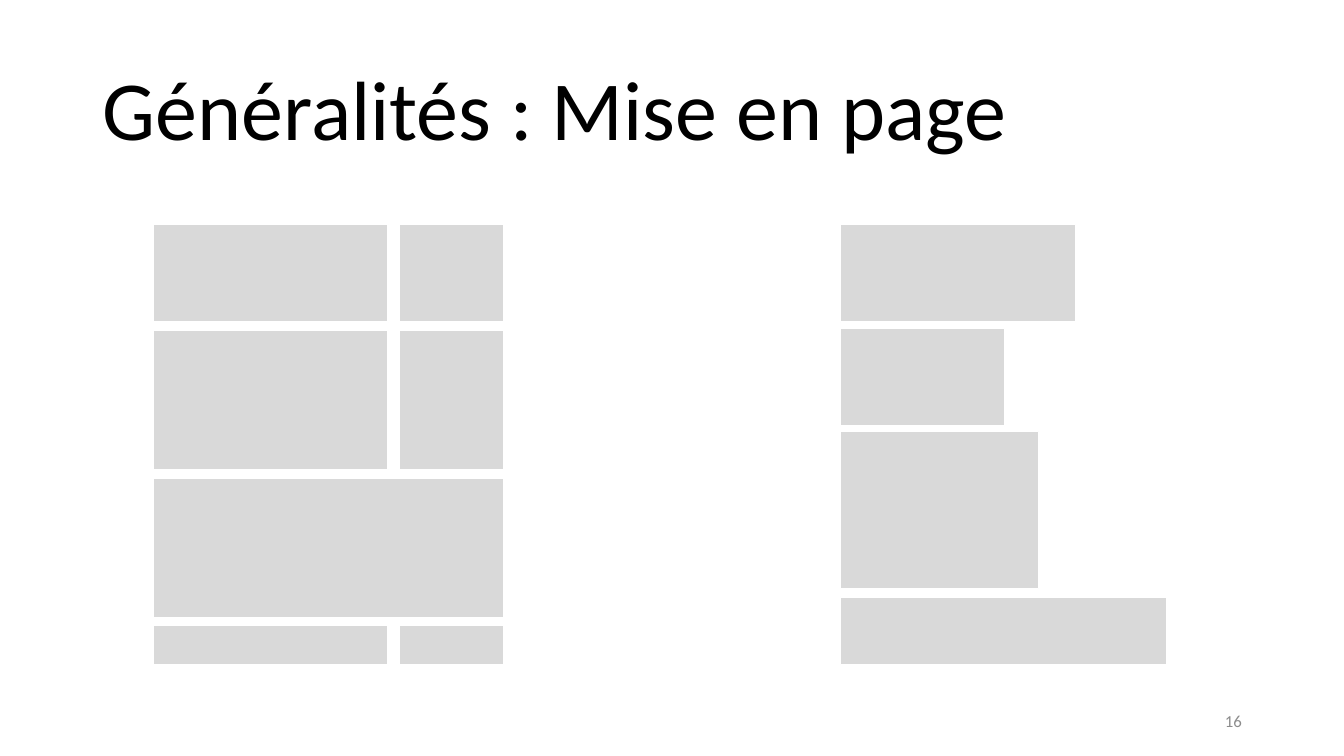
from dataclasses import dataclass

from pptx import Presentation
from pptx.dml.color import RGBColor
from pptx.enum import shapes, text
from pptx.shapes.group import GroupShape
from pptx.slide import Slide
from pptx.text.text import TextFrame
from pptx.util import Cm, Pt

BLACK = RGBColor(0x00, 0x00, 0x00)
NUMBER_GREY = RGBColor(0x8C, 0x8C, 0x8C)
BLOCK_GREY = RGBColor(0xD9, 0xD9, 0xD9)
WHITE = RGBColor(0xFF, 0xFF, 0xFF)
FONT = "Calibri"


@dataclass(frozen=True)
class Block:
    """A grey rectangle, measured in centimetres."""

    left: float
    top: float
    width: float
    height: float


@dataclass(frozen=True)
class Row:
    height: float
    split: bool


LAYOUT_TOP = 5.66
GRID_GAP = 0.21
MAIN_LEFT, MAIN_WIDTH = 3.86, 5.92
SIDE_LEFT, SIDE_WIDTH = 10.06, 2.64
ALIGNED_ROWS = [Row(2.46, True), Row(3.51, True), Row(3.51, False), Row(0.99, True)]

RAGGED_LEFT = 21.18
RAGGED_BLOCKS = [
    Block(RAGGED_LEFT, LAYOUT_TOP, 5.92, 2.46),
    Block(RAGGED_LEFT, 8.28, 4.14, 2.46),
    Block(RAGGED_LEFT, 10.87, 5, 3.96),
    Block(RAGGED_LEFT, 15.04, 8.23, 1.7),
]


def aligned_blocks() -> list[Block]:
    """Stack the rows, each with a main and a side block or one full-width block."""
    blocks: list[Block] = []
    top = LAYOUT_TOP
    for row in ALIGNED_ROWS:
        if row.split:
            blocks.append(Block(MAIN_LEFT, top, MAIN_WIDTH, row.height))
            blocks.append(Block(SIDE_LEFT, top, SIDE_WIDTH, row.height))
        else:
            full_width = SIDE_LEFT + SIDE_WIDTH - MAIN_LEFT
            blocks.append(Block(MAIN_LEFT, top, full_width, row.height))
        top += row.height + GRID_GAP
    return blocks


def draw_block(group: GroupShape, block: Block) -> None:
    shape = group.shapes.add_shape(
        shapes.MSO_SHAPE.RECTANGLE,
        Cm(block.left), Cm(block.top), Cm(block.width), Cm(block.height),
    )
    shape.shadow.inherit = False
    shape.fill.solid()
    shape.fill.fore_color.rgb = BLOCK_GREY
    shape.line.color.rgb = WHITE
    shape.line.width = Pt(1)


def draw_layout(slide: Slide, blocks: list[Block]) -> None:
    group = slide.shapes.add_group_shape()
    for block in blocks:
        draw_block(group, block)


def write_line(
    frame: TextFrame, words: str, size: float, color: RGBColor, alignment: text.PP_ALIGN
) -> None:
    frame.text = words
    frame.word_wrap = True
    frame.auto_size = text.MSO_AUTO_SIZE.NONE
    frame.vertical_anchor = text.MSO_ANCHOR.MIDDLE
    paragraph = frame.paragraphs[0]
    paragraph.alignment = alignment
    paragraph.font.name = FONT
    paragraph.font.size = Pt(size)
    paragraph.font.color.rgb = color


def add_title(slide: Slide) -> None:
    title = slide.shapes.title
    title.left, title.top = Cm(2.34), Cm(1.02)
    title.width, title.height = Cm(29.21), Cm(3.68)
    write_line(
        title.text_frame, "Généralités : Mise en page", 60, BLACK, text.PP_ALIGN.LEFT
    )
    title.text_frame.paragraphs[0].line_spacing = 0.9


def add_page_number(slide: Slide) -> None:
    box = slide.shapes.add_textbox(Cm(23.93), Cm(17.65), Cm(7.62), Cm(1.02))
    write_line(box.text_frame, "16", 12, NUMBER_GREY, text.PP_ALIGN.RIGHT)


def main() -> None:
    presentation = Presentation()
    presentation.slide_width = Cm(33.87)
    presentation.slide_height = Cm(19.05)
    title_only = presentation.slide_layouts.get_by_name("Title Only")
    slide = presentation.slides.add_slide(title_only)
    add_title(slide)
    add_page_number(slide)
    draw_layout(slide, aligned_blocks())
    draw_layout(slide, RAGGED_BLOCKS)
    presentation.save("out.pptx")


if __name__ == "__main__":
    main()
